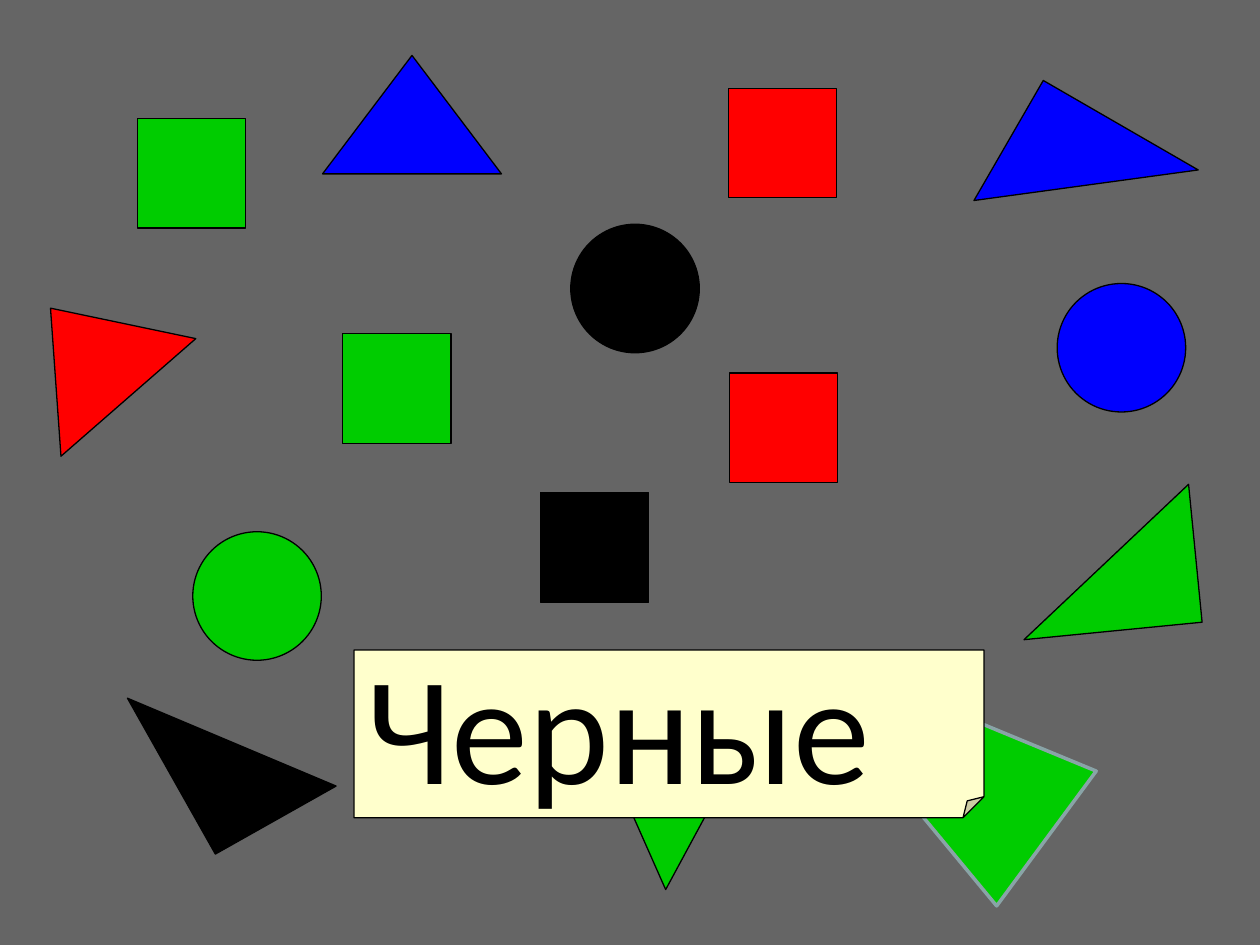
from typing import NamedTuple

from lxml import etree
from pptx import Presentation
from pptx.dml.color import RGBColor
from pptx.enum import shapes as s, text as t
from pptx.oxml import ns
from pptx.util import Inches, Pt

GREY = RGBColor(0x65, 0x65, 0x65)
BLACK = RGBColor(0, 0, 0)
RED = RGBColor(0xFF, 0, 0)
GREEN = RGBColor(0, 0xCC, 0)
BLUE = RGBColor(0, 0, 0xFF)
CREAM = RGBColor(0xFF, 0xFF, 0xCC)
STEEL = RGBColor(0x89, 0xA4, 0xA7)

KIND = s.MSO_SHAPE


class Size(NamedTuple):
    wide: float
    high: float


class Piece(NamedTuple):
    kind: KIND
    size: Size
    left: float
    top: float
    fill: RGBColor
    turn: float = 0


PEAK = Size(1.42, 0.94)
WEDGE = Size(1.1, 1.42)
DISC = Size(1.02, 1.02)
BLOCK = Size(0.86, 0.87)

PIECES = [
    # Triangles
    Piece(KIND.ISOSCELES_TRIANGLE, PEAK, 2.56, 0.44, BLUE),
    Piece(KIND.RIGHT_TRIANGLE, WEDGE, 1.29, 5.18, BLACK, 330.6),
    Piece(KIND.ISOSCELES_TRIANGLE, PEAK, 0, 2.33, RED, 318.9),
    Piece(KIND.RIGHT_TRIANGLE, WEDGE, 5.16, 5.56, GREEN, 66.1),
    Piece(KIND.RIGHT_TRIANGLE, WEDGE, 8.23, 3.75, GREEN, 264.4),
    Piece(KIND.RIGHT_TRIANGLE, WEDGE, 8.07, 0.76, BLUE, 120),
    # Circles
    Piece(KIND.OVAL, DISC, 1.53, 4.22, GREEN),
    Piece(KIND.OVAL, DISC, 4.53, 1.78, BLACK),
    Piece(KIND.OVAL, DISC, 3.05, 5.39, RED),
    Piece(KIND.OVAL, DISC, 8.39, 2.25, BLUE),
    # Squares
    Piece(KIND.RECTANGLE, BLOCK, 5.79, 2.96, RED),
    Piece(KIND.RECTANGLE, BLOCK, 1.09, 0.94, GREEN),
    Piece(KIND.RECTANGLE, BLOCK, 2.72, 2.65, GREEN),
    Piece(KIND.RECTANGLE, BLOCK, 5.78, 0.7, RED),
    Piece(KIND.RECTANGLE, BLOCK, 4.29, 3.91, BLACK),
]
KITE = [(7.91, 7.19), (7.19, 6.32), (7.66, 5.69), (8.7, 6.12)]
NOTE = Piece(KIND.FOLDED_CORNER, Size(5, 1.33), 2.81, 5.16, CREAM)


def paint(shape, fill: RGBColor, line: RGBColor = BLACK, width: float = 0.75) -> None:
    shape.shadow.inherit = False
    shape.fill.solid()
    shape.fill.fore_color.rgb = fill
    shape.line.color.rgb = line
    shape.line.width = Pt(width)


def draw(slide, piece: Piece):
    shape = slide.shapes.add_shape(
        piece.kind, Inches(piece.left), Inches(piece.top),
        Inches(piece.size.wide), Inches(piece.size.high))
    shape.rotation = piece.turn
    paint(shape, piece.fill)
    return shape


def draw_kite(slide, points: list[tuple[float, float]]) -> None:
    first, *rest = [(Inches(x), Inches(y)) for x, y in points]
    path = slide.shapes.build_freeform(*first)
    path.add_line_segments(rest, close=True)
    paint(path.convert_to_shape(), GREEN, line=STEEL, width=2)


def fold(shape, share: float) -> None:
    """Set the folded corner's size, which the library does not list."""
    guides = shape.element.find(".//" + ns.qn("a:avLst"))
    for old in list(guides):
        guides.remove(old)
    etree.SubElement(guides, ns.qn("a:gd"), name="adj",
                     fmla=f"val {round(share * 100000)}")


def write(shape, words: str, *, size: float, font: str, color: RGBColor) -> None:
    frame = shape.text_frame
    frame.word_wrap = False
    frame.vertical_anchor = t.MSO_ANCHOR.MIDDLE
    para = frame.paragraphs[0]
    para.alignment = t.PP_ALIGN.LEFT
    run = para.add_run()
    run.text = words
    run.font.size = Pt(size)
    run.font.name = font
    run.font.color.rgb = color


def main() -> None:
    deck = Presentation()
    deck.slide_width, deck.slide_height = Inches(10), Inches(7.5)
    slide = deck.slides.add_slide(deck.slide_layouts[6])
    slide.background.fill.solid()
    slide.background.fill.fore_color.rgb = GREY

    # Scattered figures
    for piece in PIECES:
        draw(slide, piece)
    draw_kite(slide, KITE)

    # Note with the colour name
    note = draw(slide, NOTE)
    fold(note, 0.125)
    write(note, "Черные", size=88, font="Calibri", color=BLACK)

    deck.save("out.pptx")


if __name__ == "__main__":
    main()
